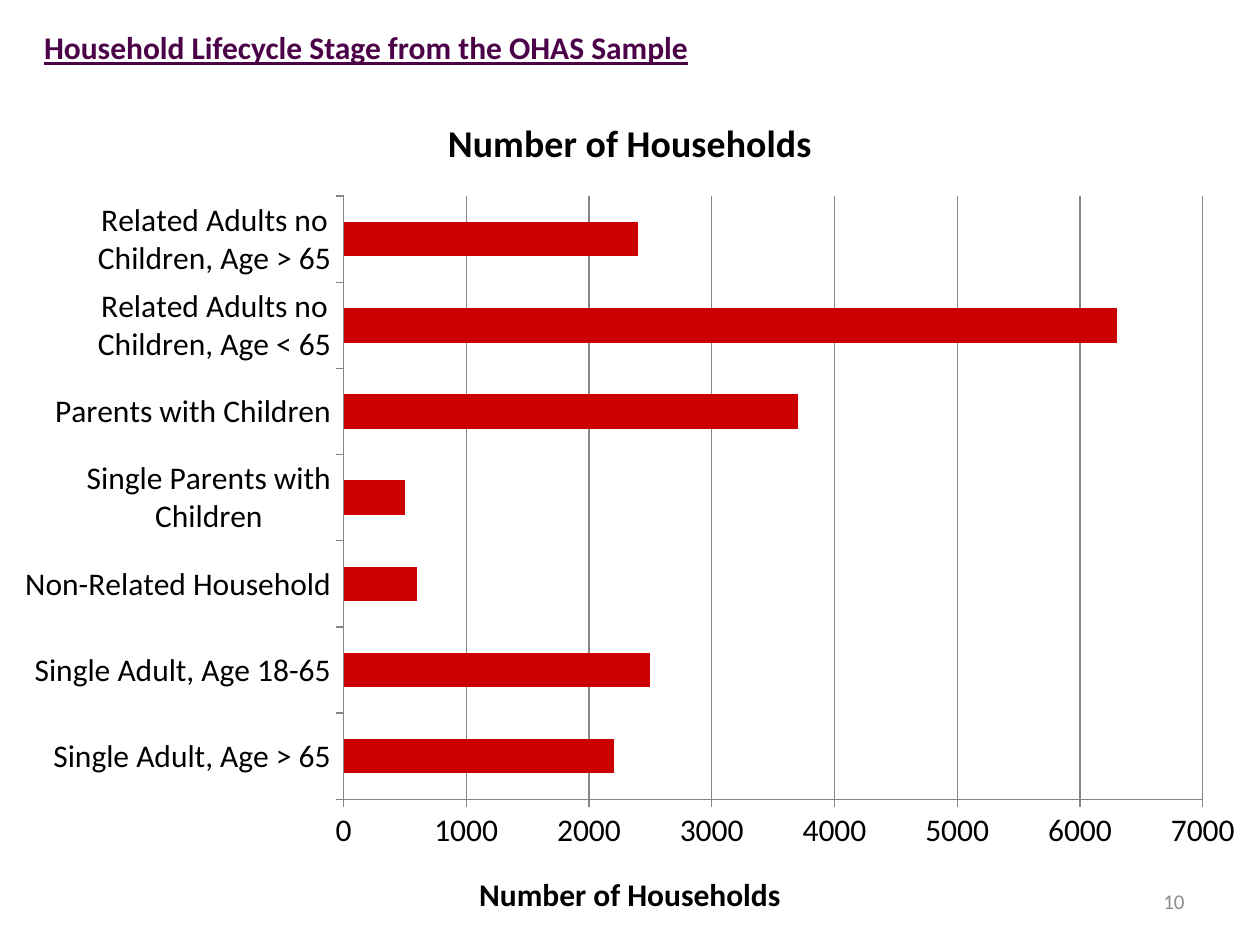
import pptx
import pptx.chart.data
import pptx.dml.color
import pptx.enum.chart
import pptx.enum.text
import pptx.util

WIDTH, HEIGHT = pptx.util.Inches(10), pptx.util.Inches(7.5)
FONT = "Calibri"
MEASURE = "Number of Households"
HOUSEHOLDS = {
    "Single Adult, Age > 65": 2200,
    "Single Adult, Age 18-65": 2500,
    "Non-Related Household": 600,
    "Single Parents with Children": 500,
    "Parents with Children": 3700,
    "Related Adults no Children, Age < 65": 6300,
    "Related Adults no Children, Age > 65": 2400,
}


def colour(code):
    return pptx.dml.color.RGBColor.from_string(code)


def share(left, top, width, height):
    """Turn shares of the slide's size into lengths."""
    return (int(left * WIDTH), int(top * HEIGHT),
            int(width * WIDTH), int(height * HEIGHT))


def set_font(font, size, code, bold=False):
    font.name, font.size, font.bold = FONT, pptx.util.Pt(size), bold
    font.color.rgb = colour(code)


def write_text(box, text, place, size, code, align, bold=False):
    box.left, box.top, box.width, box.height = place
    frame = box.text_frame
    frame.text = text
    frame.vertical_anchor = pptx.enum.text.MSO_ANCHOR.MIDDLE
    para = frame.paragraphs[0]
    para.alignment = align
    set_font(para.font, size, code, bold)
    return frame


def add_heading(page):
    frame = write_text(page.shapes.title,
                       "Household Lifecycle Stage from the OHAS Sample",
                       share(0.025, 0.023, 0.536, 0.054), 18, "4C0248",
                       pptx.enum.text.PP_ALIGN.LEFT, bold=True)
    frame.word_wrap = False
    frame.auto_size = pptx.enum.text.MSO_AUTO_SIZE.NONE
    frame.paragraphs[0].font.underline = True


def add_page_number(page, number):
    place = share(0.717, 0.927, 0.233, 0.053)
    box = page.shapes.add_textbox(*place)
    frame = write_text(box, number, place, 12, "8C8C8C",
                       pptx.enum.text.PP_ALIGN.RIGHT)
    frame.word_wrap = True


def title_chart_part(part, text, size):
    """Title a chart or one of its axes."""
    part.has_title = True
    frame = (part.chart_title if hasattr(part, "chart_title")
             else part.axis_title).text_frame
    frame.text = text
    set_font(frame.paragraphs[0].font, size, "000000", bold=True)


def style_line(line):
    line.color.rgb = colour("868686")
    line.width = pptx.util.Pt(0.75)


def add_household_chart(page):
    data = pptx.chart.data.CategoryChartData()
    data.categories = list(HOUSEHOLDS)
    data.add_series(MEASURE, list(HOUSEHOLDS.values()))
    chart = page.shapes.add_chart(
        pptx.enum.chart.XL_CHART_TYPE.BAR_CLUSTERED,
        *share(0, 0.09, 1, 0.91), data).chart
    set_font(chart.font, 18, "000000")
    chart.has_legend = False
    title_chart_part(chart, MEASURE, 21.6)

    # Bars
    plot = chart.plots[0]
    plot.gap_width = 150
    plot.vary_by_categories = False
    fill = plot.series[0].format.fill
    fill.solid()
    fill.fore_color.rgb = colour("CC0000")

    # Axes
    for axis in (chart.category_axis, chart.value_axis):
        axis.major_tick_mark = pptx.enum.chart.XL_TICK_MARK.OUTSIDE
        axis.minor_tick_mark = pptx.enum.chart.XL_TICK_MARK.NONE
        style_line(axis.format.line)
    values = chart.value_axis
    values.minimum_scale, values.maximum_scale = 0, 7000
    values.major_unit = 1000
    values.has_major_gridlines = True
    style_line(values.major_gridlines.format.line)
    title_chart_part(values, MEASURE, 18)


def main():
    deck = pptx.Presentation()
    deck.slide_width, deck.slide_height = WIDTH, HEIGHT
    page = deck.slides.add_slide(deck.slide_layouts.get_by_name("Title Only"))
    add_heading(page)
    add_page_number(page, "10")
    add_household_chart(page)
    deck.save("out.pptx")


if __name__ == "__main__":
    main()
